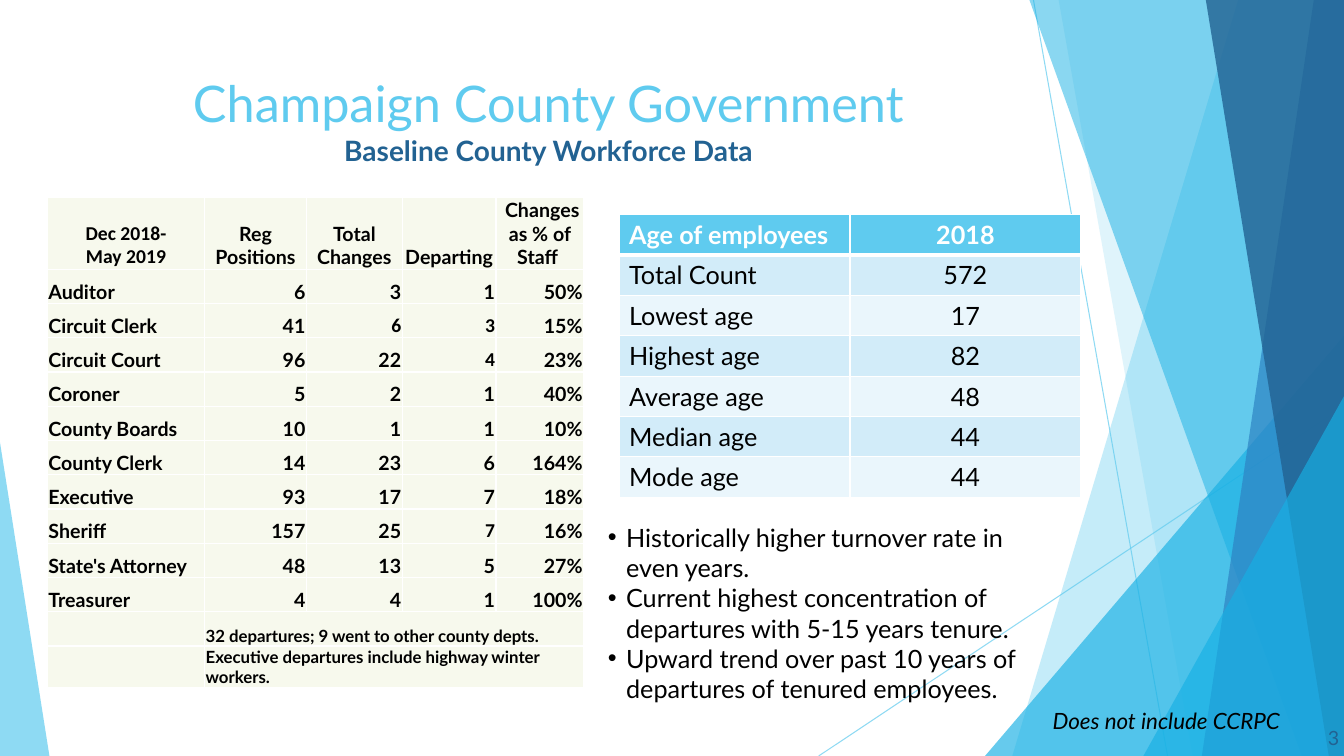
from lxml import etree
from pptx import Presentation
from pptx.dml.color import RGBColor
from pptx.enum import shapes as kinds, text
from pptx.oxml import ns
from pptx.util import Inches, Pt

SKY = RGBColor(0x5F, 0xCB, 0xEF)
CYAN = RGBColor(0x17, 0xB0, 0xE4)
BLUE = RGBColor(0x2E, 0x83, 0xC3)
NAVY = RGBColor(0x22, 0x62, 0x92)
PALE = RGBColor(0xD2, 0xEC, 0xF9)
PALER = RGBColor(0xEA, 0xF6, 0xFC)
CREAM = RGBColor(0xF7, 0xF9, 0xED)
BLACK = RGBColor(0, 0, 0)
WHITE = RGBColor(0xFF, 0xFF, 0xFF)

LEFT, CENTER, RIGHT = text.PP_ALIGN.LEFT, text.PP_ALIGN.CENTER, text.PP_ALIGN.RIGHT
WIDTH, HEIGHT = 13.33, 7.5

# Each ribbon runs to the right edge: left x at top, left x at bottom, colour, opacity
RIBBONS_BACK = [(12.28, 10.04, SKY, 36), (10.5, 11.83, SKY, 20)]
RIBBONS_FRONT = [(10.21, 12.91, CYAN, 50), (13.03, 11.92, BLUE, 70), (11.96, 13.18, NAVY, 80)]

AGES = [
    ("Age of employees", "2018"),
    ("Total Count", "572"),
    ("Lowest age", "17"),
    ("Highest age", "82"),
    ("Average age", "48"),
    ("Median age", "44"),
    ("Mode age", "44"),
]
STAFF = [
    ("Dec 2018-\nMay 2019", "Reg Positions", "Total Changes", "Departing", " Changes as % of Staff "),
    ("Auditor", "6", "3", "1", "50%"),
    ("Circuit Clerk", "41", "6", "3", "15%"),
    ("Circuit Court", "96", "22", "4", "23%"),
    ("Coroner", "5", "2", "1", "40%"),
    ("County Boards", "10", "1", "1", "10%"),
    ("County Clerk", "14", "23", "6", "164%"),
    ("Executive", "93", "17", "7", "18%"),
    ("Sheriff", "157", "25", "7", "16%"),
    ("State's Attorney", "48", "13", "5", "27%"),
    ("Treasurer", "4", "4", "1", "100%"),
]
STAFF_NOTES = [
    "32 departures; 9 went to other county depts.",
    "Executive departures include highway winter workers.",
]
CALIBRI_CELLS = {(0, 0), (2, 2), (2, 3), (3, 3), (8, 3)}
FINDINGS = [
    "Historically higher turnover rate in even years.",
    "Current highest concentration of departures with 5-15 years tenure.",
    "Upward trend over past 10 years of departures of tenured employees.",
]


def format_paragraph(paragraph, align=LEFT, color=BLACK, **font_format):
    paragraph.alignment = align
    for run in paragraph.runs:
        run.font.color.rgb = color
        for name, value in {"name": "Lato", **font_format}.items():
            setattr(run.font, name, value)


def set_opacity(shape, percent):
    for color in shape._element.spPr.iter(ns.qn("a:srgbClr")):
        etree.SubElement(color, ns.qn("a:alpha")).set("val", str(percent * 1000))


def paint(shape, color, opacity):
    shape.shadow.inherit = False
    shape.fill.solid()
    shape.fill.fore_color.rgb = color
    shape.line.fill.background()
    set_opacity(shape, opacity)


def add_ribbon(slide, top_x, bottom_x, color, opacity):
    builder = slide.shapes.build_freeform(Inches(top_x), 0)
    corners = [(WIDTH, 0), (WIDTH, HEIGHT), (bottom_x, HEIGHT)]
    builder.add_line_segments([(Inches(x), Inches(y)) for x, y in corners], close=True)
    paint(builder.convert_to_shape(), color, opacity)


def add_triangle(slide, box, apex, color, opacity):
    triangle = slide.shapes.add_shape(kinds.MSO_SHAPE.ISOSCELES_TRIANGLE, *map(Inches, box))
    triangle.adjustments[0] = apex
    paint(triangle, color, opacity)


def add_hairline(slide, *ends):
    line = slide.shapes.add_connector(kinds.MSO_CONNECTOR.STRAIGHT, *map(Inches, ends))
    line.line.color.rgb = SKY
    line.line.width = Pt(0.75)
    set_opacity(line, 70)
    etree.SubElement(line._element.spPr, ns.qn("a:effectLst"))


def add_backdrop(slide):
    add_hairline(slide, 10.25, 0, 11.58, HEIGHT)
    add_hairline(slide, WIDTH, 4.03, 8.12, HEIGHT)
    for ribbon in RIBBONS_BACK:
        add_ribbon(slide, *ribbon)
    add_triangle(slide, (9.77, 3.33, 3.56, 4.17), 1, CYAN, 66)
    for ribbon in RIBBONS_FRONT:
        add_ribbon(slide, *ribbon)
    add_triangle(slide, (11.34, 3.93, 1.99, 3.57), 1, CYAN, 66)
    add_triangle(slide, (0, 4.39, 0.49, 3.11), 0, SKY, 70)


def place(slide, shape, box):
    """Move a placeholder to the box and in front of everything drawn so far."""
    slide.shapes._spTree.append(shape._element)
    for name, value in zip(("left", "top", "width", "height"), box):
        setattr(shape, name, Inches(value))
    shape.text_frame.auto_size = text.MSO_AUTO_SIZE.NONE
    shape.text_frame.vertical_anchor = text.MSO_ANCHOR.TOP


def fill_title(slide, box):
    title = slide.shapes.title
    place(slide, title, box)
    title.text_frame.text = "Champaign County Government\vBaseline County Workforce Data"
    paragraph = title.text_frame.paragraphs[0]
    format_paragraph(paragraph, CENTER, SKY, size=Pt(36))
    subtitle = paragraph.runs[1].font
    subtitle.size, subtitle.bold, subtitle.color.rgb = Pt(20), True, NAVY


def style_cell(cell, color, bottom_border=1):
    cell.fill.solid()
    cell.fill.fore_color.rgb = color
    properties = cell._tc.get_or_add_tcPr()
    for index, side in enumerate("LRTB"):
        border = etree.Element(ns.qn(f"a:ln{side}"))
        border.set("w", str(Pt(bottom_border if side == "B" else 1)))
        solid = etree.SubElement(border, ns.qn("a:solidFill"))
        etree.SubElement(solid, ns.qn("a:srgbClr")).set("val", str(WHITE))
        properties.insert(index, border)


def add_sized_table(slide, box, widths, heights):
    frame = slide.shapes.add_table(len(heights), len(widths), *map(Inches, box))
    for column, width in zip(frame.table.columns, widths):
        column.width = Inches(width)
    for row, height in zip(frame.table.rows, heights):
        row.height = Inches(height)
    return frame.table


def add_age_table(slide, box):
    rows = len(AGES)
    table = add_sized_table(slide, box, [box[2] / 2] * 2, [box[3] / rows] * rows)
    for r, values in enumerate(AGES):
        header = r == 0
        for c, value in enumerate(values):
            cell = table.cell(r, c)
            cell.text = value
            style_cell(cell, SKY if header else PALE if r % 2 else PALER, 3 if header else 1)
            format_paragraph(cell.text_frame.paragraphs[0], CENTER if c else LEFT,
                             WHITE if header else BLACK, size=Pt(18), bold=header)


def add_staff_table(slide, box):
    rows = STAFF + [("", note, "", "", "") for note in STAFF_NOTES]
    heights = [0.71] + [0.34] * (len(rows) - 2) + [0.41]
    table = add_sized_table(slide, box, [1.56, 1.01, 0.95, 0.93, 0.87], heights)
    for r, values in enumerate(rows):
        is_note = r >= len(STAFF)
        if is_note:
            table.cell(r, 1).merge(table.cell(r, 4))
        for c, value in enumerate(values):
            cell = table.cell(r, c)
            style_cell(cell, CREAM)
            cell.vertical_anchor = text.MSO_ANCHOR.BOTTOM
            cell.margin_left = cell.margin_right = cell.margin_top = Inches(0.01)
            cell.margin_bottom = 0
            if not value:
                continue
            cell.text = value
            align = CENTER if r == 0 else LEFT if c == 0 or is_note else RIGHT
            font = "Calibri" if (r, c) in CALIBRI_CELLS else "Lato"
            for paragraph in cell.text_frame.paragraphs:
                format_paragraph(paragraph, align, name=font, bold=True,
                                 size=Pt(12 if is_note else 14))


def fill_findings(slide, box):
    body = slide.placeholders[1]
    place(slide, body, box)
    body.text_frame.text = "\n".join(FINDINGS)
    for paragraph in body.text_frame.paragraphs:
        format_paragraph(paragraph, size=Pt(18))
        paragraph.space_before = Pt(0)
        properties = paragraph._p.get_or_add_pPr()
        properties.set("marL", str(Inches(0.18)))
        properties.set("indent", str(-Inches(0.18)))
        etree.SubElement(properties, ns.qn("a:buChar")).set("char", "•")


def add_label(slide, box, words, inset, **paragraph_format):
    frame = slide.shapes.add_textbox(*map(Inches, box)).text_frame
    frame.word_wrap = True
    frame.margin_left = Inches(inset)
    frame.text = words
    format_paragraph(frame.paragraphs[0], **paragraph_format)


def build_workforce_slide(presentation):
    slide = presentation.slides.add_slide(presentation.slide_layouts[1])
    add_backdrop(slide)
    fill_title(slide, (0.74, 0.67, 9.4, 1.21))
    add_age_table(slide, (6.14, 2.13, 4.58, 2.8))
    add_staff_table(slide, (0.47, 1.96, 5.32, 4.81))
    fill_findings(slide, (5.93, 5.13, 4.58, 1.92))
    add_label(slide, (10.19, 6.97, 2.87, 0.37), "Does not include CCRPC", 0.25,
              size=Pt(16), italic=True)
    add_label(slide, (12.93, 7.15, 0.4, 0.35), "3", 0.24, color=NAVY, size=Pt(14))


def main():
    presentation = Presentation()
    presentation.slide_width, presentation.slide_height = Inches(WIDTH), Inches(HEIGHT)
    build_workforce_slide(presentation)
    presentation.save("out.pptx")


if __name__ == "__main__":
    main()
